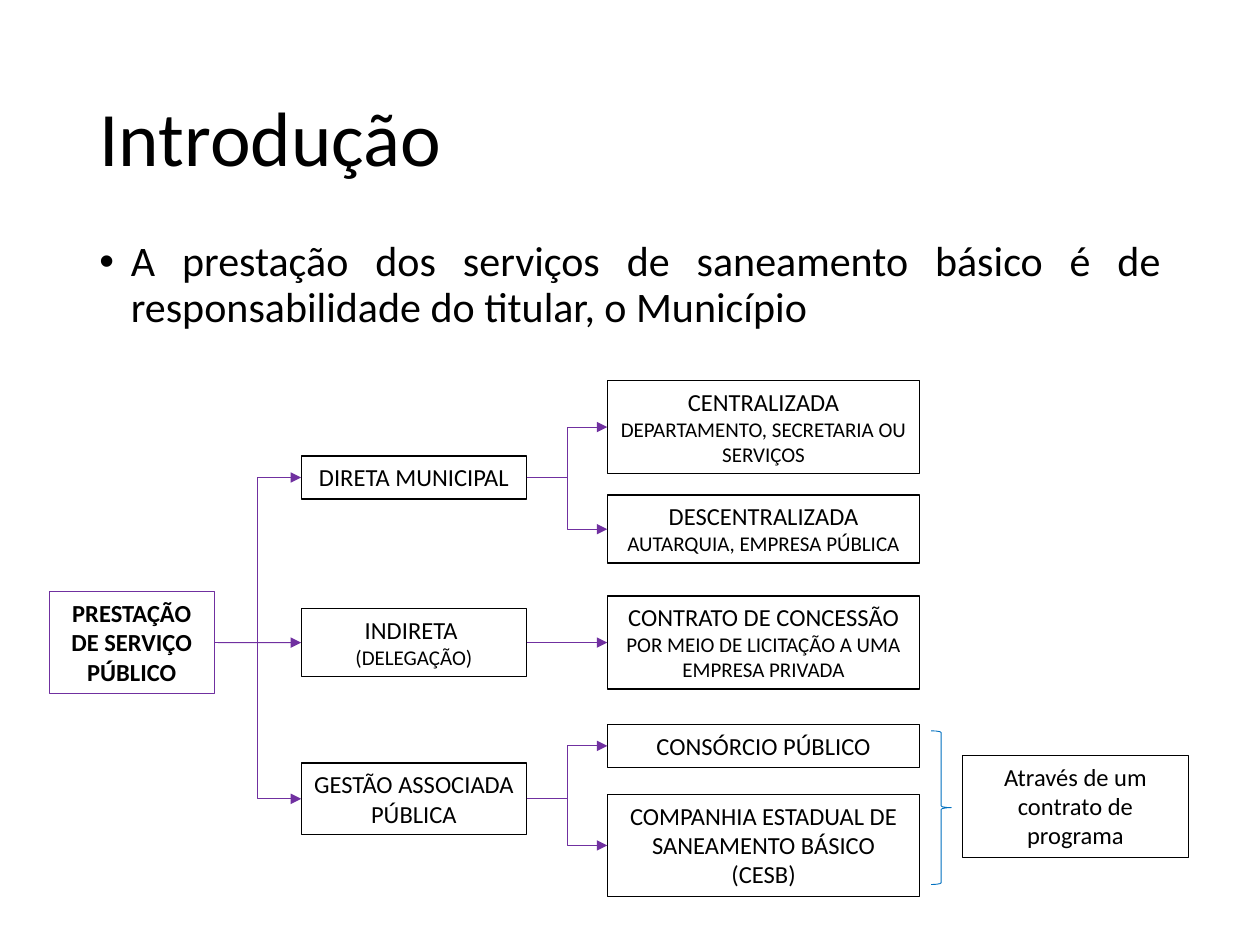
from lxml.etree import SubElement
from pptx import Presentation
from pptx.dml.color import RGBColor
from pptx.enum.shapes import MSO_CONNECTOR as LINK, MSO_SHAPE as SHAPE
from pptx.enum.text import MSO_ANCHOR as ANCHOR, MSO_AUTO_SIZE as FIT, PP_ALIGN as ALIGN
from pptx.oxml.ns import qn
from pptx.util import Inches, Pt

BLACK, PURPLE, BLUE = "000000", "7030A0", "0070C0"


def rgb(value):
    return RGBColor.from_string(value)


def style(paragraph, size, align, bold=False):
    paragraph.alignment = align
    font = paragraph.font
    font.name, font.size, font.bold = "Calibri", Pt(size), bold
    font.color.rgb = rgb(BLACK)


prs = Presentation()
prs.slide_width, prs.slide_height = Inches(10), Inches(7.5)
slide = prs.slides.add_slide(prs.slide_layouts[5])
shapes = slide.shapes

# Title
title = shapes.title
title.left, title.top = Inches(0.69), Inches(0.4)
title.width, title.height = Inches(8.62), Inches(1.45)
title.text_frame.text = "Introdução"
title.text_frame.vertical_anchor = ANCHOR.MIDDLE
heading = title.text_frame.paragraphs[0]
heading.line_spacing = 0.9
style(heading, 44, ALIGN.LEFT)

# Bulleted statement
statement = shapes.add_textbox(Inches(0.69), Inches(1.86), Inches(8.62), Inches(0.92))
statement.text_frame.word_wrap = True
bullet = statement.text_frame.paragraphs[0]
bullet.text = ("A prestação dos serviços de saneamento básico é de "
               "responsabilidade do titular, o Município")
bullet.line_spacing, bullet.space_before = 0.9, Pt(10)
style(bullet, 24, ALIGN.JUSTIFY)
props = bullet._p.get_or_add_pPr()
props.set("marL", str(Inches(0.25)))
props.set("indent", str(Inches(-0.25)))
SubElement(props, qn("a:buFont")).set("typeface", "Arial")
SubElement(props, qn("a:buChar")).set("char", "•")

# Diagram columns: left edge and width
columns = {"service": (0.39, 1.31), "mode": (2.39, 1.79),
           "form": (4.82, 2.48), "note": (7.64, 1.79)}

# Boxes: key, column, vertical centre, height, main text, detail, detail size
boxes = [
    ("service", "service", 5.1, 0.81, "PRESTAÇÃO DE SERVIÇO PÚBLICO", "", 0),
    ("direct", "mode", 3.79, 0.34, "DIRETA MUNICIPAL", "", 0),
    ("indirect", "mode", 5.1, 0.54, "INDIRETA ", "(DELEGAÇÃO)", 12),
    ("shared", "mode", 6.34, 0.57, "GESTÃO ASSOCIADA PÚBLICA", "", 0),
    ("central", "form", 3.39, 0.74, "CENTRALIZADA",
     "DEPARTAMENTO, SECRETARIA OU SERVIÇOS", 12),
    ("decentral", "form", 4.2, 0.54, "DESCENTRALIZADA", "AUTARQUIA, EMPRESA PÚBLICA", 12),
    ("concession", "form", 5.1, 0.74, "CONTRATO DE CONCESSÃO",
     "POR MEIO DE LICITAÇÃO A UMA EMPRESA PRIVADA", 12),
    ("consortium", "form", 5.92, 0.34, "CONSÓRCIO PÚBLICO", "", 0),
    ("company", "form", 6.71, 0.81, "COMPANHIA ESTADUAL DE SANEAMENTO BÁSICO", "(CESB)", 14),
    ("note", "note", 6.4, 0.81, "Através de um contrato de programa", "", 0),
]
nodes, centres = {}, {}
for key, column, centre, height, main, detail, detail_size in boxes:
    left, width = columns[column]
    node = shapes.add_shape(SHAPE.RECTANGLE, Inches(left), Inches(centre - height / 2),
                            Inches(width), Inches(height))
    node.shadow.inherit = False
    node.fill.background()
    node.line.color.rgb = rgb(PURPLE if key == "service" else BLACK)
    node.line.width = Pt(0.75)
    frame = node.text_frame
    frame.word_wrap, frame.auto_size = True, FIT.SHAPE_TO_FIT_TEXT
    frame.vertical_anchor = ANCHOR.TOP
    frame.text = main
    style(frame.paragraphs[0], 14, ALIGN.CENTER, bold=key == "service")
    if detail:
        line = frame.add_paragraph()
        line.text = detail
        style(line, detail_size, ALIGN.CENTER)
    nodes[key], centres[key] = node, centre

# Arrows from the right side of a box to the left side of the next
branches = {"service": ["direct", "indirect", "shared"],
            "direct": ["central", "decentral"],
            "indirect": ["concession"],
            "shared": ["consortium", "company"]}
for source, targets in branches.items():
    for target in targets:
        level = centres[source] == centres[target]
        arrow = shapes.add_connector(LINK.STRAIGHT if level else LINK.ELBOW, 0, 0, 0, 0)
        arrow.begin_connect(nodes[source], 3)
        arrow.end_connect(nodes[target], 1)
        arrow.line.color.rgb = rgb(PURPLE)
        arrow.line.width = Pt(0.5)
        SubElement(arrow.line._get_or_add_ln(), qn("a:tailEnd")).set("type", "triangle")
        SubElement(arrow._element.spPr, qn("a:effectLst"))

# Brace joining the shared forms to the note
brace = shapes.add_shape(SHAPE.RIGHT_BRACE, Inches(7.39), Inches(5.8),
                         Inches(0.16), Inches(1.22))
brace.shadow.inherit = False
brace.fill.background()
brace.line.color.rgb = rgb(BLUE)
brace.line.width = Pt(0.5)

prs.save("out.pptx")
